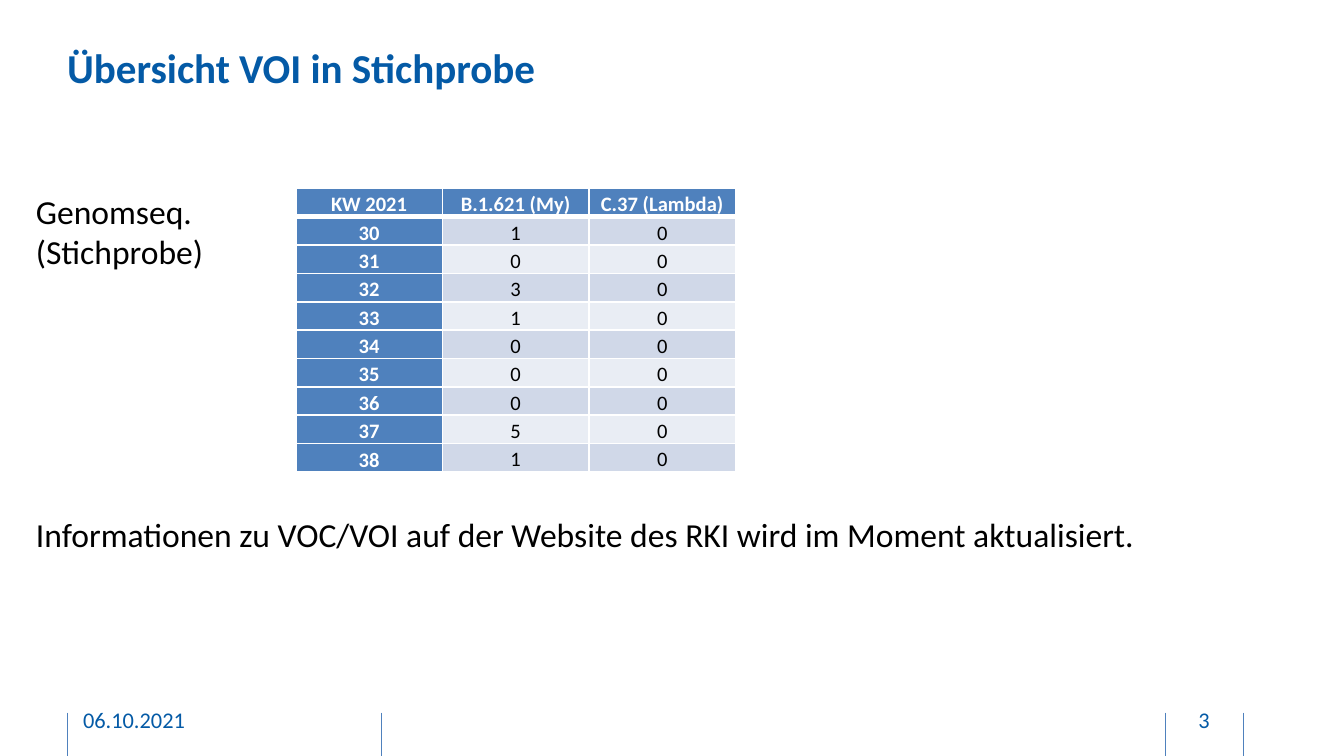
from lxml.etree import SubElement
from pptx import Presentation
from pptx.dml.color import RGBColor
from pptx.enum.shapes import MSO_CONNECTOR
from pptx.enum.text import MSO_ANCHOR as Anchor, PP_ALIGN as Align
from pptx.oxml.ns import qn
from pptx.util import Cm, Pt

FONT = "Calibri"
TITLE_BLUE = RGBColor(0x04, 0x5A, 0xA6)
TABLE_BLUE = RGBColor(0x4F, 0x81, 0xBD)
BAND_DARK = RGBColor(0xD0, 0xD8, 0xE8)
BAND_LIGHT = RGBColor(0xE9, 0xED, 0xF4)
WHITE = RGBColor(0xFF, 0xFF, 0xFF)
BLACK = RGBColor(0, 0, 0)

SLIDE_WIDTH, SLIDE_HEIGHT = 25.4, 14.29
HEADER = ("KW 2021", "B.1.621 (My)", "C.37 (Lambda)")
FIRST_WEEK = 30
MY_COUNTS = (1, 0, 3, 1, 0, 0, 0, 5, 1)
LAMBDA_COUNTS = (0,) * len(MY_COUNTS)
TABLE_LEFT, TABLE_TOP = 5.59, 3.56
COLUMN_WIDTH, ROW_HEIGHT = 2.77, 0.5

FOOTER_TOP = 13.47
FOOTER_LINES = (1.27, 7.21, 22.02, 23.5)

# text, (left, top, width, height), format
FOOTER = dict(size=12, color=TITLE_BLUE, anchor=Anchor.MIDDLE, margins=(0, 0.13))
BODY = dict(size=18, wrap=False)
TEXTS = (
    ("06.10.2021", (1.57, 13.23, 5.16, 0.76), FOOTER),
    ("3", (22.07, 13.23, 1.37, 0.76), dict(FOOTER, align=Align.CENTER)),
    ("Übersicht VOI in Stichprobe", (1.27, 0.28, 22.17, 1.98),
     dict(size=22, color=TITLE_BLUE, bold=True, anchor=Anchor.MIDDLE, margins=(0, 0))),
    ("Genomseq.\n(Stichprobe)", (0.43, 3.48, 3.71, 1.8), BODY),
    ("Informationen zu VOC/VOI auf der Website des RKI wird im Moment aktualisiert.",
     (0.43, 9.58, 21.54, 1.8), BODY),
)


def write_text(frame, text, size=11, color=BLACK, bold=False, align=Align.LEFT,
               spacing=None):
    paragraph = frame.paragraphs[0]
    paragraph.text = text
    paragraph.alignment = align
    paragraph.line_spacing = spacing
    for run in paragraph.runs:
        run.font.name = FONT
        run.font.size = Pt(size)
        run.font.bold = bold
        run.font.color.rgb = color


def add_text(slide, text, box, anchor=Anchor.TOP, margins=(0.25, 0.13), wrap=True,
             **text_format):
    frame = slide.shapes.add_textbox(*map(Cm, box)).text_frame
    frame.word_wrap = wrap
    frame.vertical_anchor = anchor
    frame.margin_left = frame.margin_right = Cm(margins[0])
    frame.margin_top = frame.margin_bottom = Cm(margins[1])
    write_text(frame, text, **text_format)


def add_footer_line(slide, x):
    line = slide.shapes.add_connector(
        MSO_CONNECTOR.STRAIGHT, Cm(x), Cm(FOOTER_TOP), Cm(x), Cm(SLIDE_HEIGHT))
    line.line.color.rgb = TABLE_BLUE
    line.line.width = Pt(0.5)
    SubElement(line._element.spPr, qn("a:effectLst"))


def set_borders(cell, **widths):
    """Draw white borders; widths in points by side: L, R, T, B."""
    properties = cell._tc.get_or_add_tcPr()
    for side in "LRTB":
        border = SubElement(properties, qn(f"a:ln{side}"), w=str(Pt(widths.get(side, 1))))
        fill = SubElement(border, qn("a:solidFill"))
        SubElement(fill, qn("a:srgbClr"), val=str(WHITE))


def add_count_table(slide):
    weeks = range(FIRST_WEEK, FIRST_WEEK + len(MY_COUNTS))
    rows = [HEADER, *zip(weeks, MY_COUNTS, LAMBDA_COUNTS)]
    table = slide.shapes.add_table(
        len(rows), len(HEADER), Cm(TABLE_LEFT), Cm(TABLE_TOP),
        Cm(COLUMN_WIDTH * len(HEADER)), Cm(ROW_HEIGHT * len(rows))).table
    for column in table.columns:
        column.width = Cm(COLUMN_WIDTH)
    for r, values in enumerate(rows):
        table.rows[r].height = Cm(ROW_HEIGHT)
        band = BAND_DARK if r % 2 else BAND_LIGHT
        for c, value in enumerate(values):
            heading = r == 0 or c == 0
            cell = table.cell(r, c)
            cell.margin_left = cell.margin_right = Cm(0.13 if heading else 0)
            cell.margin_top = cell.margin_bottom = 0
            cell.vertical_anchor = Anchor.TOP if heading else Anchor.BOTTOM
            set_borders(cell, B=3 if r == 0 else 1, T=3 if r == 1 else 1)
            cell.fill.solid()
            cell.fill.fore_color.rgb = TABLE_BLUE if heading else band
            write_text(cell.text_frame, str(value), color=WHITE if heading else BLACK,
                       bold=heading, align=Align.CENTER, spacing=1.15)


def main():
    presentation = Presentation()
    presentation.slide_width = Cm(SLIDE_WIDTH)
    presentation.slide_height = Cm(SLIDE_HEIGHT)
    slide = presentation.slides.add_slide(presentation.slide_layouts[6])
    for x in FOOTER_LINES:
        add_footer_line(slide, x)
    for text, box, text_format in TEXTS:
        add_text(slide, text, box, **text_format)
    add_count_table(slide)
    presentation.save("out.pptx")


if __name__ == "__main__":
    main()
